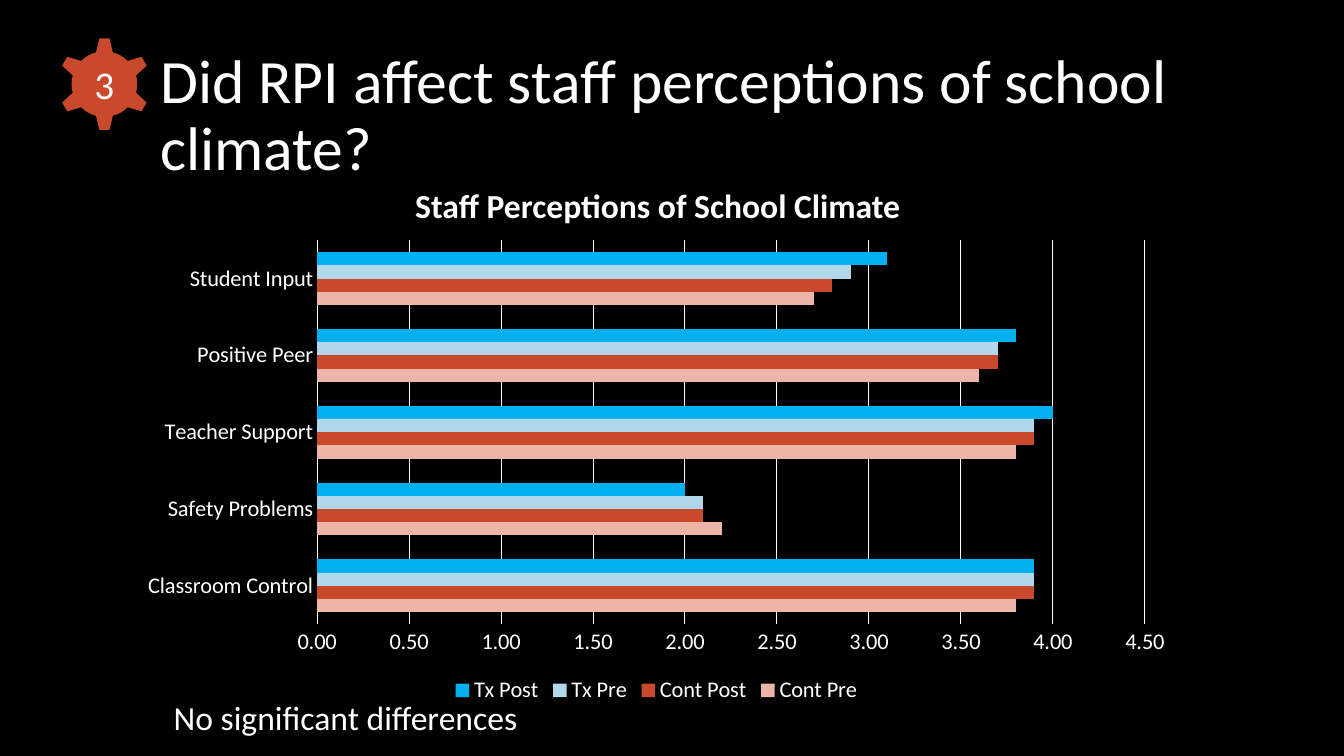
from pptx import Presentation
from pptx.chart.data import CategoryChartData
from pptx.dml.color import RGBColor
from pptx.enum.chart import XL_CHART_TYPE, XL_LEGEND_POSITION, XL_TICK_MARK
from pptx.enum.shapes import MSO_SHAPE
from pptx.enum.text import MSO_ANCHOR, PP_ALIGN
from pptx.util import Inches, Pt

BLACK = RGBColor(0x00, 0x00, 0x00)
WHITE = RGBColor(0xFF, 0xFF, 0xFF)
RUST = RGBColor(0xC9, 0x49, 0x2C)
PALE_RUST = RGBColor(0xEC, 0xB5, 0xA8)
BLUE = RGBColor(0x00, 0xB0, 0xF0)
PALE_BLUE = RGBColor(0xB1, 0xD7, 0xEB)
FONT = "Calibri"

presentation = Presentation()
presentation.slide_width = Inches(13.33)
presentation.slide_height = Inches(7.5)
slide = presentation.slides.add_slide(presentation.slide_layouts[6])
slide.background.fill.solid()
slide.background.fill.fore_color.rgb = BLACK


def place(left, top, width, height):
    """Turn percentages of the slide's size into lengths."""
    across, down = presentation.slide_width / 100, presentation.slide_height / 100
    return int(left * across), int(top * down), int(width * across), int(height * down)


def write(shape, text, size, align=PP_ALIGN.LEFT, anchor=MSO_ANCHOR.TOP, bold=False):
    frame = shape.text_frame
    frame.word_wrap = True
    frame.vertical_anchor = anchor
    paragraph = frame.paragraphs[0]
    paragraph.alignment = align
    run = paragraph.add_run()
    run.text = text
    run.font.name = FONT
    run.font.size = Pt(size)
    run.font.bold = bold
    run.font.color.rgb = WHITE
    return paragraph


# Slide title
title = slide.shapes.add_textbox(*place(11.18, 5.15, 88.22, 20.67))
title_paragraph = write(title, "Did RPI affect staff perceptions of school climate?", 44,
                        anchor=MSO_ANCHOR.MIDDLE)
title_paragraph.line_spacing = 0.9

# Bar chart: categories and series run from the bottom up
chart_data = CategoryChartData(number_format="0.00")
chart_data.categories = ["Classroom Control", "Safety Problems", "Teacher Support",
                         "Positive Peer", "Student Input"]
series_table = [
    ("Cont Pre", PALE_RUST, (3.8, 2.2, 3.8, 3.6, 2.7)),
    ("Cont Post", RUST, (3.9, 2.1, 3.9, 3.7, 2.8)),
    ("Tx Pre", PALE_BLUE, (3.9, 2.1, 3.9, 3.7, 2.9)),
    ("Tx Post", BLUE, (3.9, 2.0, 4.0, 3.8, 3.1)),
]
for name, color, values in series_table:
    chart_data.add_series(name, values)
chart = slide.shapes.add_chart(XL_CHART_TYPE.BAR_CLUSTERED,
                               *place(9.45, 30.53, 78.77, 63.2), chart_data).chart
chart.has_title = False
chart.font.name = FONT
chart.font.size = Pt(16)
chart.font.color.rgb = WHITE
plot = chart.plots[0]
plot.gap_width = 182
plot.vary_by_categories = False
for series, (name, color, values) in zip(plot.series, series_table):
    series.format.fill.solid()
    series.format.fill.fore_color.rgb = color

# Axes, gridlines and legend
category_axis, value_axis = chart.category_axis, chart.value_axis
for axis in (category_axis, value_axis):
    axis.major_tick_mark = XL_TICK_MARK.NONE
    axis.minor_tick_mark = XL_TICK_MARK.NONE
value_axis.minimum_scale = 0
value_axis.maximum_scale = 4.5
value_axis.major_unit = 0.5
value_axis.tick_labels.number_format = "0.00"
value_axis.tick_labels.number_format_is_linked = False
value_axis.format.line.fill.background()
for line in (category_axis.format.line, value_axis.major_gridlines.format.line):
    line.color.rgb = WHITE
    line.width = Pt(0.75)
chart.has_legend = True
chart.legend.position = XL_LEGEND_POSITION.BOTTOM
chart.legend.include_in_layout = False

# Finding below the chart
finding = slide.shapes.add_textbox(*place(12.18, 91.47, 30.76, 6.67))
write(finding, "No significant differences", 24)

# Numbered gear
gear = slide.shapes.add_shape(MSO_SHAPE.GEAR_6, *place(4.28, 4.93, 6.98, 12.4))
gear.shadow.inherit = False
gear.fill.solid()
gear.fill.fore_color.rgb = RUST
gear.line.fill.background()
write(gear, "3", 28, PP_ALIGN.CENTER, MSO_ANCHOR.MIDDLE)

# Chart heading
heading = slide.shapes.add_textbox(*place(12.18, 23.8, 73.52, 6.67))
write(heading, "Staff Perceptions of School Climate", 24, PP_ALIGN.CENTER, bold=True)

presentation.save("out.pptx")
